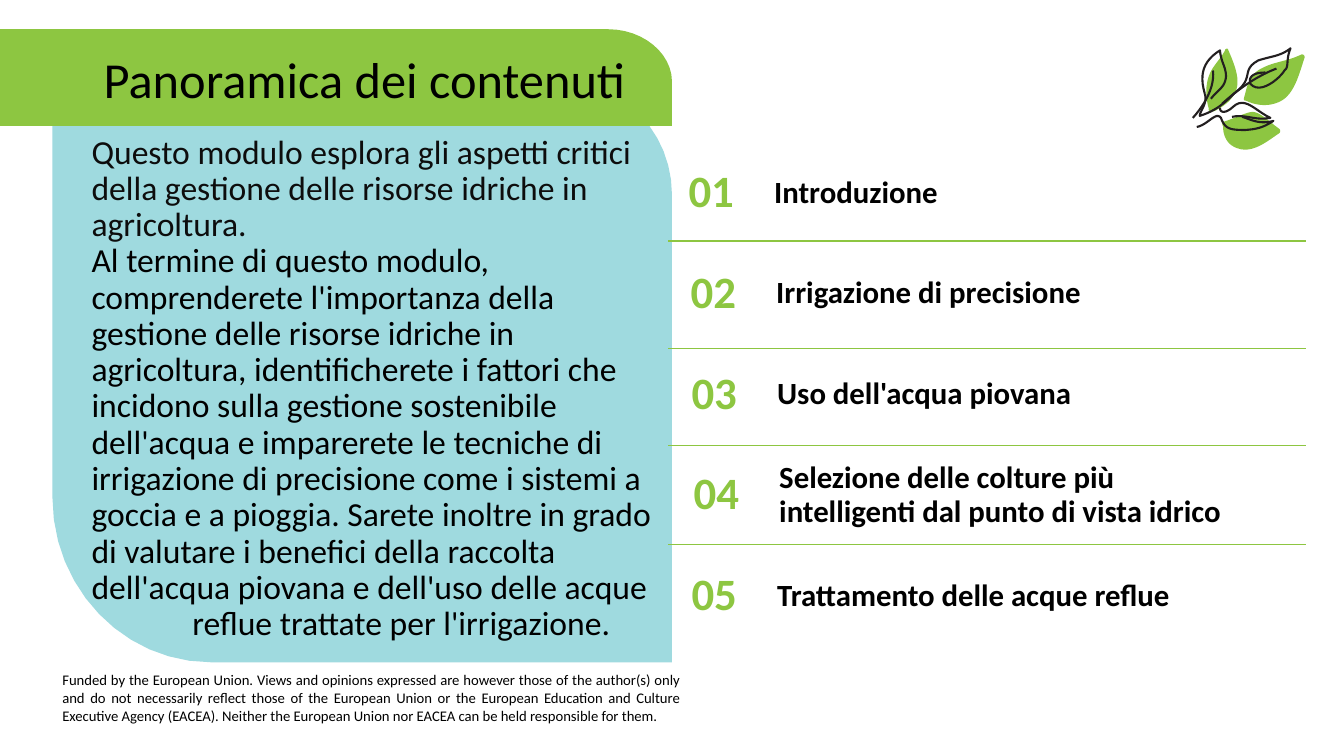
import pptx
import pptx.util
import pptx.dml.color
import pptx.enum.shapes
import pptx.enum.text
from lxml import etree

Inches = pptx.util.Inches
RGB = pptx.dml.color.RGBColor
ALIGN = pptx.enum.text.PP_ALIGN
ANCHOR = pptx.enum.text.MSO_ANCHOR

GREEN = RGB(0x8D, 0xC6, 0x41)
AQUA = RGB(0x9F, 0xDA, 0xDF)
INK = RGB(0x23, 0x1F, 0x20)
BLACK = RGB(0, 0, 0)
NEAR_BLACK = RGB(0x0D, 0x0D, 0x0D)

WIDTH, HEIGHT = 13.33, 7.5
PANEL_LEFT, PANEL_RIGHT = 0.52, WIDTH / 2
RULE_LEFT, RULE_RIGHT = 6.63, 12.95
ROW_TOP, ROW_PITCH, ROW_HEIGHT = 1.54, 1.0, 0.75
NUMBER_WIDTH, TOPIC_OFFSET, TOPIC_WIDTH = 0.77, 0.91, 4.88
CURVE_STEPS = 12

deck = pptx.Presentation()
deck.slide_width, deck.slide_height = Inches(WIDTH), Inches(HEIGHT)
page = deck.slides.add_slide(deck.slide_layouts[6])


def add_outline(start, pieces, fill=None):
    """Draw straight pieces (x, y) and cubic pieces (x1, y1, x2, y2, x, y);
    without a fill the outline stays open and is stroked in ink."""
    points = [start]
    for piece in pieces:
        if len(piece) == 2:
            points.append(piece)
            continue
        x0, y0 = points[-1]
        x1, y1, x2, y2, x3, y3 = piece
        for step in range(1, CURVE_STEPS + 1):
            t = step / CURVE_STEPS
            u = 1 - t
            a, b, c, d = u ** 3, 3 * u * u * t, 3 * u * t * t, t ** 3
            points.append((a * x0 + b * x1 + c * x2 + d * x3,
                           a * y0 + b * y1 + c * y2 + d * y3))
    points = [(Inches(x), Inches(y)) for x, y in points]
    builder = page.shapes.build_freeform(*points[0])
    builder.add_line_segments(points[1:], close=fill is not None)
    shape = builder.convert_to_shape()
    shape.shadow.inherit = False
    if fill is None:
        shape.fill.background()
        shape.line.color.rgb = INK
        shape.line.width = pptx.util.Pt(1.5)
    else:
        shape.fill.solid()
        shape.fill.fore_color.rgb = fill
        shape.line.fill.background()


def add_text(area, paragraphs, size, colors, bold=False, align=ALIGN.LEFT,
             anchor=ANCHOR.MIDDLE, spacing=0.9, indent=0):
    box = page.shapes.add_textbox(*[Inches(length) for length in area])
    frame = box.text_frame
    frame.word_wrap = True
    frame.vertical_anchor = anchor
    frame.text = "\n".join(paragraphs)
    for para, color in zip(frame.paragraphs, colors):
        para.alignment = align
        para.line_spacing = spacing
        if indent:
            properties = para._p.get_or_add_pPr()
            properties.set("marL", str(Inches(indent)))
            properties.set("defTabSz", str(Inches(1)))
        for span in para.runs:
            span.font.name = "Calibri"
            span.font.size = pptx.util.Pt(size)
            span.font.bold = bold
            span.font.color.rgb = color


# Panel and title band
add_outline((PANEL_RIGHT, 6.57), [
    (2.09, 6.57), (1.23, 6.57, PANEL_LEFT, 5.84, PANEL_LEFT, 4.93),
    (PANEL_LEFT, 0.82), (5.6, 0.82),
    (6.19, 0.82, PANEL_RIGHT, 1.32, PANEL_RIGHT, 1.93)], AQUA)
add_outline((-0.02, 0.29), [
    (6.03, 0.29), (6.38, 0.29, PANEL_RIGHT, 0.53, PANEL_RIGHT, 0.81),
    (PANEL_RIGHT, 1.25), (0, 1.25), (0, 0.37)], GREEN)

# Rules between the topics
for rule_y in (5.4, 4.42, 3.46, 2.39):
    rule = page.shapes.add_connector(
        pptx.enum.shapes.MSO_CONNECTOR.STRAIGHT,
        Inches(RULE_RIGHT), Inches(rule_y), Inches(RULE_LEFT), Inches(rule_y))
    rule.line.color.rgb = GREEN
    rule.line.width = pptx.util.Pt(1)
    etree.SubElement(rule._element.spPr, pptx.oxml.ns.qn("a:effectLst"))

add_text((PANEL_LEFT, 6.61, 6.33, 0.66), [
    "Funded by the European Union. Views and opinions expressed are however "
    "those of the author(s) only and do not necessarily reflect those of the "
    "European Union or the European Education and Culture Executive Agency "
    "(EACEA). Neither the European Union nor EACEA can be held responsible "
    "for them."],
    10.5, [BLACK], align=ALIGN.JUSTIFY, anchor=ANCHOR.TOP, spacing=1.0)

add_text((0.56, 1.29, 6.03, 4.36), [
    "Questo modulo esplora gli aspetti critici della gestione delle risorse "
    "idriche in agricoltura.",
    "Al termine di questo modulo, comprenderete l'importanza della gestione "
    "delle risorse idriche in agricoltura, identificherete i fattori che "
    "incidono sulla gestione sostenibile dell'acqua e imparerete le tecniche "
    "di irrigazione di precisione come i sistemi a goccia e a pioggia. Sarete "
    "inoltre in grado di valutare i benefici della raccolta dell'acqua "
    "piovana e dell'uso delle acque \treflue trattate per l'irrigazione."],
    24, [NEAR_BLACK, BLACK], anchor=ANCHOR.TOP, indent=0.25)

add_text((0.93, 0.42, 5.51, 0.79), ["Panoramica dei contenuti"], 36, [BLACK])

# Numbered topics, each with its left edge
topics = [
    (6.67, "Introduzione"),
    (6.69, "Irrigazione di precisione"),
    (6.7, "Uso dell'acqua piovana"),
    (6.72, "Selezione delle colture più\vintelligenti dal punto di vista idrico"),
    (6.7, "Trattamento delle acque reflue"),
]
for row, (left, topic) in enumerate(topics):
    top = ROW_TOP + row * ROW_PITCH
    add_text((left, top, NUMBER_WIDTH, ROW_HEIGHT), [f"{row + 1:02d}"],
             32, [GREEN], bold=True, align=ALIGN.CENTER)
    add_text((left + TOPIC_OFFSET, top, TOPIC_WIDTH, ROW_HEIGHT), [topic],
             22, [BLACK], bold=True)

# Leaf ornament: green blades, then the pen strokes over them
blades = [
    ((12.05, 1.1), [
        (12.15, 1.05, 12.25, 0.97, 12.27, 0.86),
        (12.29, 0.74, 12.23, 0.61, 12.18, 0.49),
        (12.18, 0.48, 12.15, 0.48, 12.15, 0.5),
        (12.12, 0.56, 12.08, 0.6, 12.04, 0.66),
        (11.95, 0.78, 11.95, 0.95, 11.99, 1.08),
        (11.98, 1.09, 12, 1.12, 12.05, 1.1)]),
    ((12.74, 0.98), [
        (12.85, 0.89, 12.89, 0.72, 12.94, 0.57),
        (12.94, 0.55, 12.93, 0.54, 12.91, 0.54),
        (12.77, 0.61, 12.64, 0.61, 12.51, 0.68),
        (12.39, 0.74, 12.37, 0.85, 12.34, 0.97),
        (12.33, 0.99, 12.34, 1, 12.36, 1),
        (12.48, 1.06, 12.63, 1.06, 12.74, 0.98)]),
    ((12.69, 1.32), [
        (12.7, 1.31, 12.7, 1.29, 12.69, 1.28),
        (12.59, 1.21, 12.5, 1.11, 12.42, 1.11),
        (12.34, 1.12, 12.26, 1.17, 12.13, 1.21),
        (12.12, 1.22, 12.12, 1.24, 12.13, 1.25),
        (12.13, 1.36, 12.18, 1.44, 12.27, 1.47),
        (12.42, 1.53, 12.57, 1.4, 12.69, 1.32)]),
]
strokes = [
    ((11.95, 0.93), [
        (11.89, 0.73, 11.94, 0.6, 12.1, 0.5),
        (12.11, 0.62, 12.16, 0.66, 12.16, 0.76),
        (12.15, 0.87, 12.08, 0.89, 12.01, 0.98)]),
    ((12.03, 0.7), [(12.05, 0.85, 11.96, 1.03, 11.83, 1.17)]),
    ((11.95, 0.93), [
        (11.98, 1.03, 11.9, 1.1, 11.9, 1.15),
        (12.06, 1.1, 12.15, 1.02, 12.25, 0.92),
        (12.45, 0.77, 12.3, 0.7, 12.48, 0.6),
        (12.6, 0.56, 12.7, 0.56, 12.8, 0.48),
        (12.75, 0.6, 12.79, 0.66, 12.74, 0.7),
        (12.7, 0.77, 12.5, 0.95, 12.4, 0.83),
        (12.38, 0.75, 12.45, 0.72, 12.55, 0.72)]),
    ((12.12, 1.03), [(12.2, 0.96, 12.4, 0.78, 12.66, 0.68)]),
    ((12.1, 1.07), [
        (12.1, 1.13, 12.17, 1.12, 12.23, 1.06),
        (12.35, 0.95, 12.45, 1.1, 12.6, 1.17),
        (12.45, 1.2, 12.35, 1.13, 12.22, 1.16)]),
    ((11.87, 1.26), [
        (11.98, 1.24, 12.06, 1.1, 12.11, 1.17),
        (12.15, 1.28, 12.2, 1.29, 12.35, 1.29),
        (12.5, 1.28, 12.55, 1.25, 12.63, 1.2),
        (12.48, 1.24, 12.4, 1.18, 12.32, 1.16)]),
]
for start, pieces in blades:
    add_outline(start, pieces, GREEN)
for start, pieces in strokes:
    add_outline(start, pieces)

deck.save("out.pptx")
